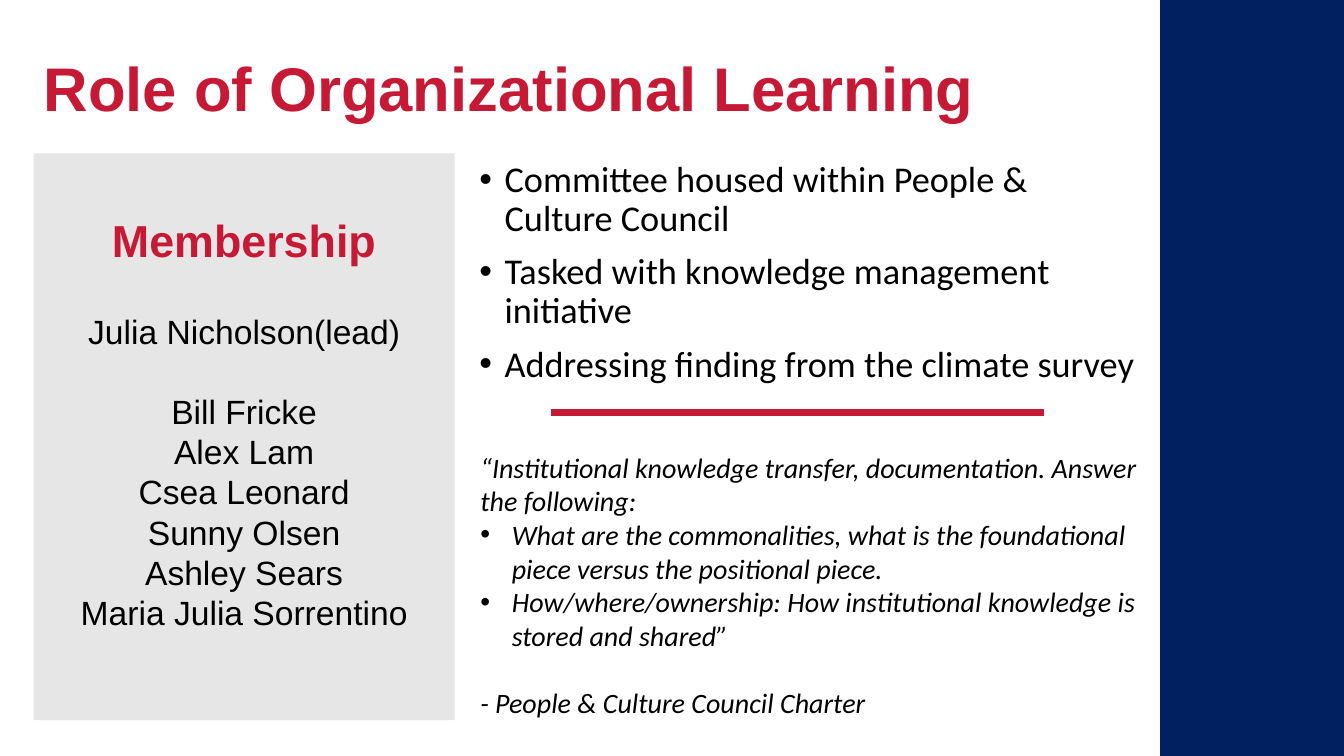
from lxml.etree import SubElement as Sub
from pptx import Presentation
from pptx.dml.color import RGBColor as Rgb
from pptx.enum.shapes import MSO_CONNECTOR as Conn, MSO_SHAPE as Form
from pptx.enum.text import MSO_ANCHOR as Anchor, MSO_AUTO_SIZE as Fit, PP_ALIGN as Align
from pptx.oxml.ns import qn
from pptx.util import Pt

PX = 9525
COLORS = {
    "red": "C61935",
    "navy": "002060",
    "gray": "E7E6E6",
    "black": "000000",
}
GOALS = [
    "Committee housed within People & Culture Council",
    "Tasked with knowledge management initiative",
    "Addressing finding from the climate survey",
]
TEAM = [
    "Bill Fricke",
    "Alex Lam",
    "Csea Leonard",
    "Sunny Olsen",
    "Ashley Sears",
    "Maria Julia Sorrentino",
]
ASKS = [
    "What are the commonalities, what is the foundational piece versus the positional piece.",
    "How/where/ownership: How institutional knowledge is stored and shared”",
]


def px(*nums):
    return [num * PX for num in nums]


def tint(name):
    return Rgb.from_string(COLORS[name])


def place(shape, *box):
    shape.left, shape.top, shape.width, shape.height = px(*box)


def set_frame(frame, anchor):
    frame.word_wrap = True
    frame.auto_size = Fit.NONE
    frame.vertical_anchor = anchor


def add_bullet(para, indent):
    props = para._p.get_or_add_pPr()
    props.set("marL", str(indent * PX))
    props.set("indent", str(-indent * PX))
    Sub(props, qn("a:buFont"), typeface="Arial")
    Sub(props, qn("a:buChar"), char="•")


def add_para(frame, text, size, face, color="black", bold=False, slant=False,
             align=Align.LEFT, before=0, line=1.0, indent=0):
    para = frame.paragraphs[0]
    if para.runs:
        para = frame.add_paragraph()
    para.alignment = align
    para.space_before = Pt(before)
    para.line_spacing = line
    if indent:
        add_bullet(para, indent)
    run = para.add_run()
    run.text = text
    font = run.font
    font.size, font.name = Pt(size), face
    font.bold, font.italic = bold, slant
    font.color.rgb = tint(color)


def add_block(slide, color, *box):
    block = slide.shapes.add_shape(Form.RECTANGLE, *px(*box))
    block.shadow.inherit = False
    block.fill.solid()
    block.fill.fore_color.rgb = tint(color)
    block.line.fill.background()
    return block


def add_rule(slide, color, weight, *ends):
    rule = slide.shapes.add_connector(Conn.STRAIGHT, *px(*ends))
    rule.line.color.rgb = tint(color)
    rule.line.width = Pt(weight)
    Sub(rule._element.spPr, qn("a:effectLst"))


def fill_title(slide):
    title = slide.shapes.title
    place(title, 32, 28, 1031, 118)
    set_frame(title.text_frame, Anchor.MIDDLE)
    add_para(title.text_frame, "Role of Organizational Learning", 44, "Arial",
             "red", bold=True, line=0.9)


def fill_goals(slide):
    body = slide.placeholders[1]
    place(body, 447, 146, 648, 228)
    set_frame(body.text_frame, Anchor.MIDDLE)
    for goal in GOALS:
        add_para(body.text_frame, goal, 25.9, "Calibri", before=10, line=0.9, indent=24)


def add_team(slide):
    frame = add_block(slide, "gray", 32, 146, 401, 540).text_frame
    set_frame(frame, Anchor.MIDDLE)
    frame.margin_bottom = 32 * PX
    add_para(frame, "Membership", 32, "Arial", "red", bold=True, align=Align.CENTER)
    add_para(frame, "Julia Nicholson(lead)", 24, "Arial", align=Align.CENTER, before=32)
    for spot, name in enumerate(TEAM):
        add_para(frame, name, 24, "Arial", align=Align.CENTER, before=0 if spot else 28)


def add_quote(slide):
    frame = slide.shapes.add_textbox(*px(448, 424, 649, 268)).text_frame
    set_frame(frame, Anchor.TOP)
    look = {"size": 20, "face": "Calibri", "slant": True}
    add_para(frame, "“Institutional knowledge transfer, documentation. Answer the following:", **look)
    for ask in ASKS:
        add_para(frame, ask, indent=30, **look)
    add_para(frame, "- People & Culture Council Charter", before=24, **look)


def main():
    deck = Presentation()
    deck.slide_width, deck.slide_height = px(1280, 720)
    slide = deck.slides.add_slide(deck.slide_layouts[1])
    fill_title(slide)
    fill_goals(slide)
    add_block(slide, "navy", 1105, 0, 175, 720)
    add_team(slide)
    add_quote(slide)
    add_rule(slide, "red", 4.5, 994, 393, 525, 393)
    deck.save("out.pptx")


if __name__ == "__main__":
    main()
